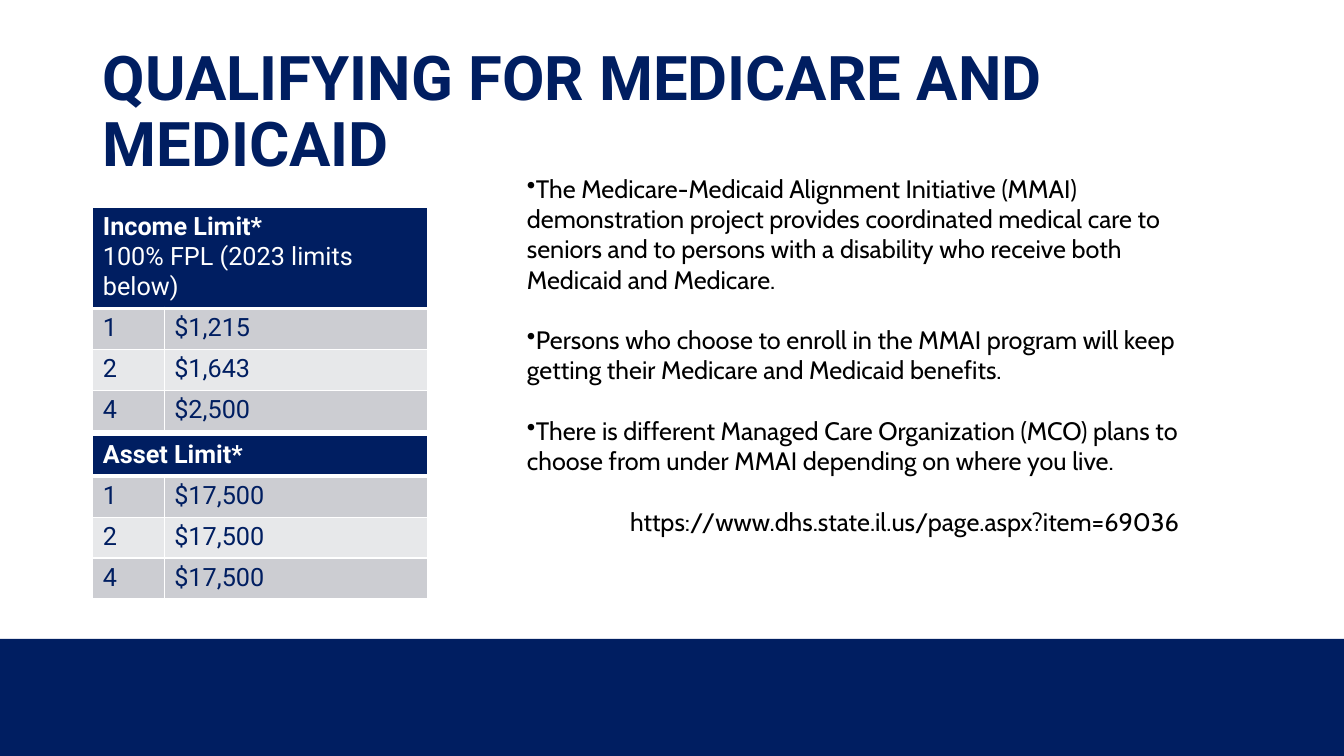
from dataclasses import dataclass

from lxml import etree
from pptx import Presentation
from pptx.dml.color import RGBColor
from pptx.enum.shapes import MSO_SHAPE
from pptx.enum.text import MSO_ANCHOR, PP_ALIGN
from pptx.oxml.ns import qn
from pptx.util import Cm, Pt

RECT = MSO_SHAPE.RECTANGLE
MIDDLE = MSO_ANCHOR.MIDDLE
RIGHT = PP_ALIGN.RIGHT


@dataclass(frozen=True)
class Theme:
    navy: str = "001E61"
    white: str = "FFFFFF"
    black: str = "000000"
    dark: str = "CCCDD2"
    light: str = "E7E8EA"
    head: str = "Roboto"
    body: str = "Cabin"
    big: float = 44
    text: float = 18
    gap: float = 21.6


THEME = Theme()

INCOME = [("1", "$1,215"), ("2", "$1,643"), ("4", "$2,500")]
ASSETS = [("1", "$17,500"), ("2", "$17,500"), ("4", "$17,500")]
POINTS = [
    "The Medicare-Medicaid Alignment Initiative (MMAI) demonstration project "
    "provides coordinated medical care to seniors and to persons with a "
    "disability who receive both Medicaid and Medicare.",
    "Persons who choose to enroll in the MMAI program will keep getting "
    "their Medicare and Medicaid benefits.",
    "There is different Managed Care Organization (MCO) plans to choose from "
    "under MMAI depending on where you live.",
]
LINK = "https://www.dhs.state.il.us/page.aspx?item=69036"


def style(para, face, size, color, bold=False):
    font = para.font
    font.name, font.size, font.bold = face, Pt(size), bold
    font.color.rgb = RGBColor.from_string(color)


def add_band(slide, box):
    band = slide.shapes.add_shape(RECT, *box)
    band.shadow.inherit = False
    band.fill.solid()
    band.fill.fore_color.rgb = RGBColor.from_string(THEME.navy)
    band.line.fill.background()


def add_title(slide, box, text):
    frame = slide.shapes.add_textbox(*box).text_frame
    frame.word_wrap = True
    frame.vertical_anchor = MIDDLE
    para = frame.paragraphs[0]
    para.text = text
    para.line_spacing = 0.9
    style(para, THEME.head, THEME.big, THEME.navy, True)


def paint(cell, fill, base=1):
    """Fill a cell and give it white borders; base is the bottom width."""
    cell.fill.solid()
    cell.fill.fore_color.rgb = RGBColor.from_string(fill)
    props = cell._tc.get_or_add_tcPr()
    widths = {"lnL": 1, "lnR": 1, "lnT": 1, "lnB": base}
    for spot, (tag, width) in enumerate(widths.items()):
        line = etree.Element(qn("a:" + tag), w=str(Pt(width)))
        solid = etree.SubElement(line, qn("a:solidFill"))
        etree.SubElement(solid, qn("a:srgbClr"), val=THEME.white)
        props.insert(spot, line)


def add_limits(slide, box, heads, rows):
    left, top, width, height = box
    table = slide.shapes.add_table(len(rows) + 1, 2, *box).table
    first, step = Cm(1.8), Cm(1.03)
    table.columns[0].width = first
    table.columns[1].width = width - first
    for row in table.rows:
        row.height = step
    table.rows[0].height = height - step * len(rows)

    # Header across both columns
    title = table.cell(0, 0)
    title.merge(table.cell(0, 1))
    for col in range(2):
        paint(table.cell(0, col), THEME.navy, 3)
    title.text = "\n".join(heads)
    for num, para in enumerate(title.text_frame.paragraphs):
        style(para, THEME.head, THEME.text, THEME.white, num == 0)

    # Striped rows
    for num, row in enumerate(rows, 1):
        for col, value in enumerate(row):
            cell = table.cell(num, col)
            paint(cell, THEME.dark if num % 2 else THEME.light, 1)
            cell.text = value
            style(cell.text_frame.paragraphs[0], THEME.head, THEME.text,
                  THEME.navy)


def add_points(slide, box, points, link):
    frame = slide.shapes.add_textbox(*box).text_frame
    frame.word_wrap = True
    for num, text in enumerate([*points, link]):
        para = frame.add_paragraph() if num else frame.paragraphs[0]
        para.text = text
        if num:
            para.space_before = Pt(THEME.gap)
        if num < len(points):
            props = para._p.get_or_add_pPr()
            etree.SubElement(props, qn("a:buChar"), char="•")
        else:
            para.alignment = RIGHT
        style(para, THEME.body, THEME.text, THEME.black)


def main():
    deck = Presentation()
    deck.slide_width, deck.slide_height = Cm(33.87), Cm(19.05)
    slide = deck.slides.add_slide(deck.slide_layouts[6])
    left, wide = Cm(2.34), Cm(8.43)

    add_band(slide, (0, Cm(16.1), deck.slide_width, Cm(2.95)))
    add_title(slide, (left, Cm(1.02), Cm(29.2), Cm(3.68)),
              "QUALIFYING FOR MEDICARE AND MEDICAID")
    add_limits(slide, (left, Cm(5.23), wide, Cm(4.88)),
               ["Income Limit*", "100% FPL (2023 limits below)"], INCOME)
    add_limits(slide, (left, Cm(10.97), wide, Cm(4.12)),
               ["Asset Limit*"], ASSETS)
    add_points(slide, (Cm(13.03), Cm(4.24), Cm(16.94), Cm(10.26)),
               POINTS, LINK)
    deck.save("out.pptx")


if __name__ == "__main__":
    main()
